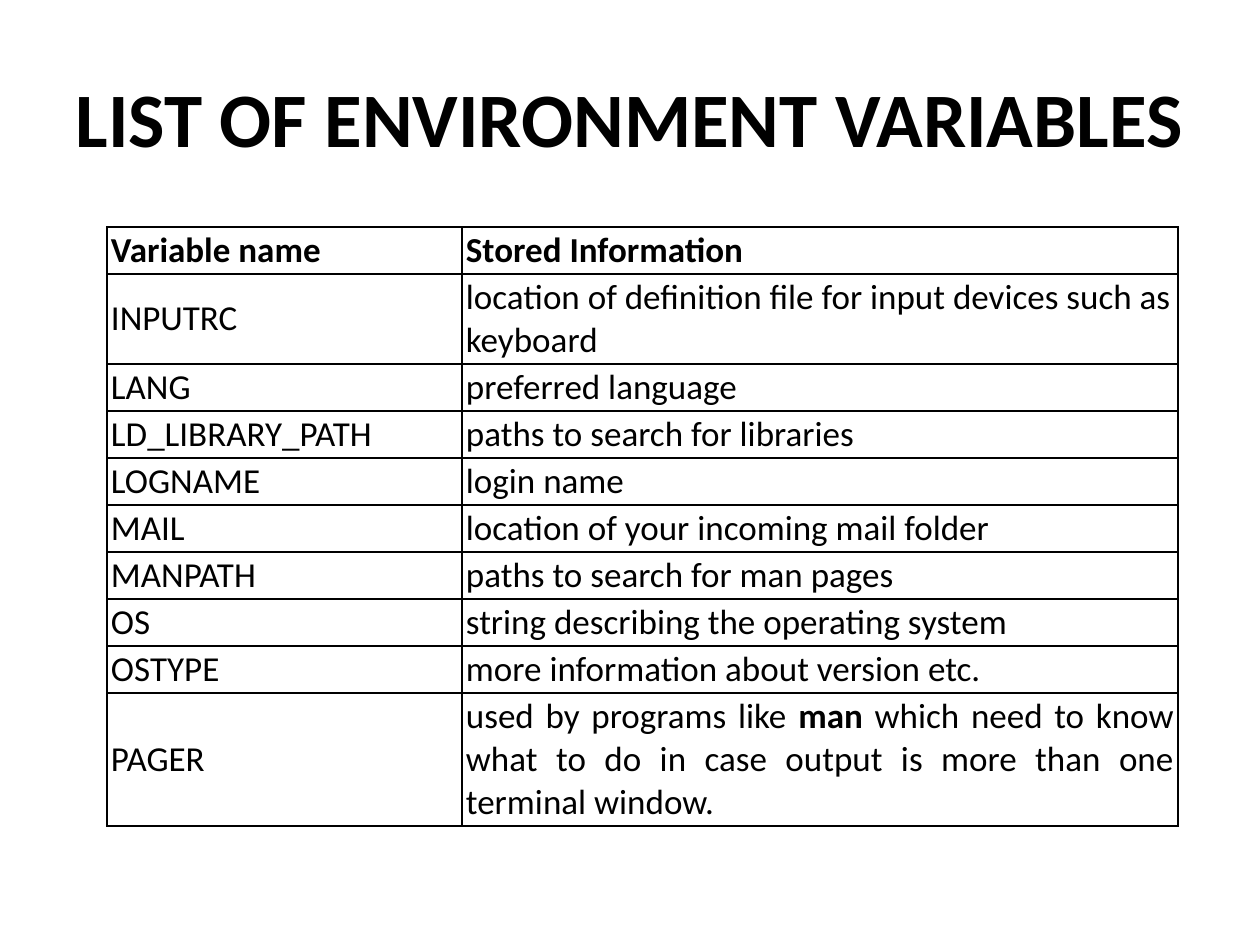
from typing import NamedTuple

from lxml.etree import SubElement
from pptx import Presentation
from pptx.dml.color import RGBColor
from pptx.enum.text import MSO_ANCHOR as Anchor, PP_ALIGN as Align
from pptx.oxml.ns import qn
from pptx.util import Emu, Pt

PX_PER_INCH = 126
COLORS = {"text": "000000", "border": "000000", "page": "FFFFFF"}
FONT = "Calibri"
LINE_HEIGHT = 43
COLUMN_WIDTHS = (355, 716)
INSET_X, INSET_Y = 4, 2


class Variable(NamedTuple):
    name: str
    stored: str
    lines: int = 1
    align: Align = Align.LEFT
    bold: bool = False
    bold_word: str = ""


VARIABLES = [
    Variable("Variable name", "Stored Information", bold=True),
    Variable("INPUTRC", "location of definition file for input devices such as keyboard", lines=2),
    Variable("LANG", "preferred language"),
    Variable("LD_LIBRARY_PATH", "paths to search for libraries"),
    Variable("LOGNAME", "login name"),
    Variable("MAIL", "location of your incoming mail folder"),
    Variable("MANPATH", "paths to search for man pages"),
    Variable("OS", "string describing the operating system"),
    Variable("OSTYPE", "more information about version etc."),
    Variable(
        "PAGER",
        "used by programs like man which need to know what to do in case output "
        "is more than one terminal window.",
        lines=3, align=Align.JUSTIFY, bold_word="man",
    ),
]


def px(length: int) -> Emu:
    return Emu(round(length * 914400 / PX_PER_INCH))


def write(frame, text: str, *, size: int = 20, bold: bool = False,
          align: Align = Align.LEFT, bold_word: str = "") -> None:
    paragraph = frame.paragraphs[0]
    paragraph.alignment = align
    before, word, after = text.partition(bold_word) if bold_word else (text, "", "")
    for part, is_bold in ((before, bold), (word, True), (after, bold)):
        if part:
            run = paragraph.add_run()
            run.text = part
            run.font.name = FONT
            run.font.size = Pt(size)
            run.font.bold = is_bold
            run.font.color.rgb = RGBColor.from_string(COLORS["text"])


def add_borders(cell) -> None:
    properties = cell._tc.get_or_add_tcPr()
    for position, side in enumerate(("lnL", "lnR", "lnT", "lnB")):
        border = properties.makeelement(qn(f"a:{side}"), {"w": str(Pt(1))})
        properties.insert(position, border)
        fill = SubElement(border, qn("a:solidFill"))
        SubElement(fill, qn("a:srgbClr"), val=COLORS["border"])


def format_cell(cell) -> None:
    cell.fill.solid()
    cell.fill.fore_color.rgb = RGBColor.from_string(COLORS["page"])
    cell.vertical_anchor = Anchor.MIDDLE
    cell.margin_left = cell.margin_right = px(INSET_X)
    cell.margin_top = cell.margin_bottom = px(INSET_Y)
    add_borders(cell)


def add_variable_table(slide, left: int, top: int) -> None:
    heights = [LINE_HEIGHT * variable.lines + 2 * INSET_Y for variable in VARIABLES]
    table = slide.shapes.add_table(
        len(VARIABLES), len(COLUMN_WIDTHS), px(left), px(top),
        px(sum(COLUMN_WIDTHS)), px(sum(heights)),
    ).table
    table.horz_banding = False
    for column, width in zip(table.columns, COLUMN_WIDTHS):
        column.width = px(width)
    for row, height, variable in zip(table.rows, heights, VARIABLES):
        row.height = px(height)
        name_cell, stored_cell = row.cells
        for cell in (name_cell, stored_cell):
            format_cell(cell)
        write(name_cell.text_frame, variable.name, bold=variable.bold, align=variable.align)
        write(stored_cell.text_frame, variable.stored, bold=variable.bold,
              align=variable.align, bold_word=variable.bold_word)


def main() -> None:
    presentation = Presentation()
    presentation.slide_width, presentation.slide_height = px(1260), px(945)
    slide = presentation.slides.add_slide(presentation.slide_layouts[5])
    heading = slide.shapes.title
    heading.left, heading.top, heading.width, heading.height = px(63), px(38), px(1134), px(158)
    heading.text_frame.vertical_anchor = Anchor.MIDDLE
    write(heading.text_frame, "LIST OF ENVIRONMENT VARIABLES", size=44, bold=True,
          align=Align.CENTER)
    add_variable_table(slide, 107, 227)
    presentation.save("out.pptx")


if __name__ == "__main__":
    main()
